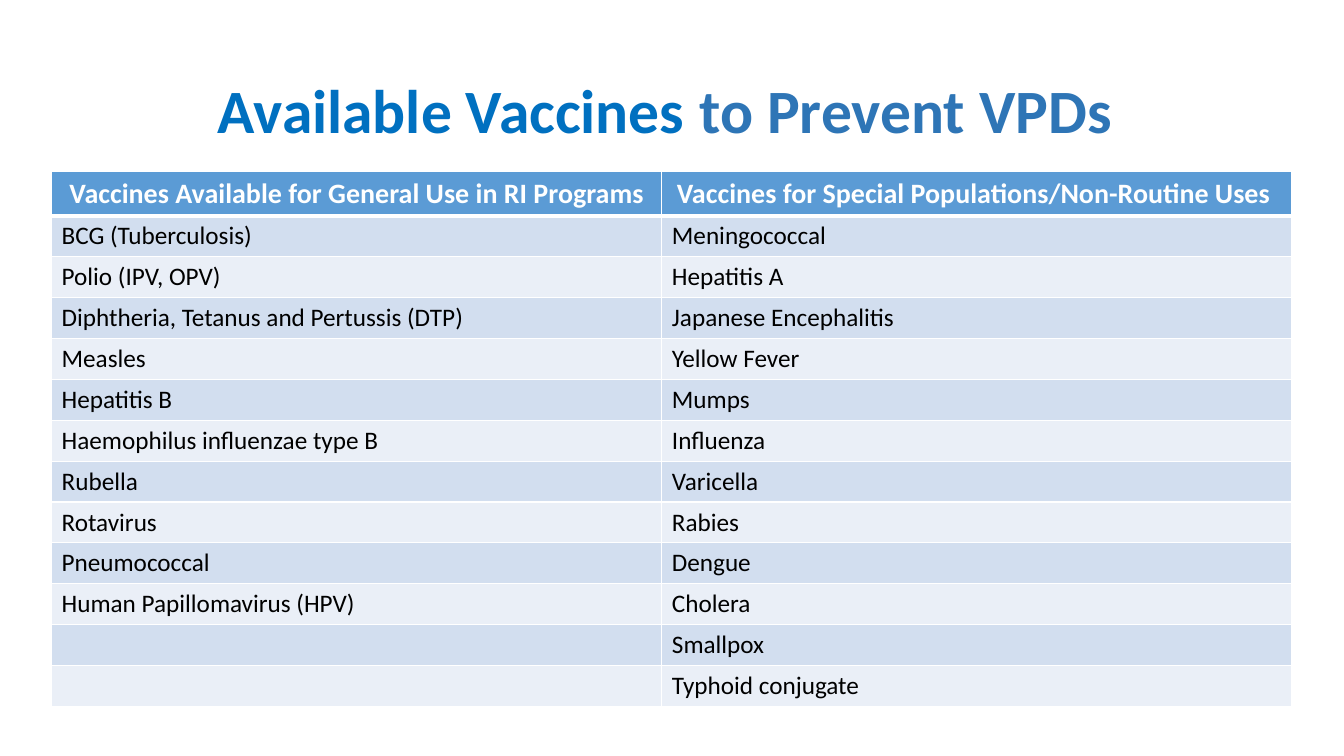
from itertools import zip_longest

from lxml import etree
from pptx import Presentation
from pptx.dml.color import RGBColor
from pptx.enum.text import MSO_ANCHOR, PP_ALIGN
from pptx.oxml.ns import qn
from pptx.util import Cm, Pt

CENTER = PP_ALIGN.CENTER
LEFT = PP_ALIGN.LEFT
MIDDLE = MSO_ANCHOR.MIDDLE
TITLE_ONLY = 5

GENERAL_USE = [
    "BCG (Tuberculosis)", "Polio (IPV, OPV)",
    "Diphtheria, Tetanus and Pertussis (DTP)", "Measles", "Hepatitis B",
    "Haemophilus influenzae type B", "Rubella", "Rotavirus", "Pneumococcal",
    "Human Papillomavirus (HPV)",
]
SPECIAL_USE = [
    "Meningococcal", "Hepatitis A", "Japanese Encephalitis", "Yellow Fever",
    "Mumps", "Influenza", "Varicella", "Rabies", "Dengue", "Cholera",
    "Smallpox", "Typhoid conjugate",
]
HEADINGS = (
    "Vaccines Available for General Use in RI Programs",
    "Vaccines for Special Populations/Non-Routine Uses ",
)


def color(hex_code):
    return RGBColor.from_string(hex_code)


class SlideBuilder:
    font_name = "Calibri"
    header_fill = "5B9BD5"
    band_fills = ("D2DEEF", "EAEFF7")
    border = "FFFFFF"

    def __init__(self, slide):
        self.slide = slide

    def format_font(self, font, size, hex_code, bold):
        font.name = self.font_name
        font.size = Pt(size)
        font.bold = bold
        font.color.rgb = color(hex_code)

    def title(self, parts, left, top, width, height):
        title = self.slide.shapes.title
        title.left, title.top = Cm(left), Cm(top)
        title.width, title.height = Cm(width), Cm(height)
        title.text_frame.vertical_anchor = MIDDLE
        paragraph = title.text_frame.paragraphs[0]
        paragraph.alignment = CENTER
        paragraph.line_spacing = 0.9
        for text, hex_code in parts:
            run = paragraph.add_run()
            run.text = text
            self.format_font(run.font, 44, hex_code, True)

    def cell_borders(self, cell, top, bottom):
        properties = cell._tc.get_or_add_tcPr()
        for side, width in (("L", 1), ("R", 1), ("T", top), ("B", bottom)):
            line = etree.SubElement(properties, qn(f"a:ln{side}"), w=str(Pt(width)))
            fill = etree.SubElement(line, qn("a:solidFill"))
            etree.SubElement(fill, qn("a:srgbClr"), val=self.border)

    def cell(self, cell, text, row_index):
        header = row_index == 0
        self.cell_borders(cell, 3 if row_index == 1 else 1, 3 if header else 1)
        cell.fill.solid()
        band = self.band_fills[(row_index - 1) % 2]
        cell.fill.fore_color.rgb = color(self.header_fill if header else band)
        cell.text_frame.text = text
        paragraph = cell.text_frame.paragraphs[0]
        paragraph.alignment = CENTER if header else LEFT
        for run in paragraph.runs:
            if header:
                self.format_font(run.font, 20, "FFFFFF", True)
            else:
                self.format_font(run.font, 18, "000000", False)

    def table(self, rows, left, top, column_widths, header_height, row_height):
        height = header_height + row_height * (len(rows) - 1)
        table = self.slide.shapes.add_table(
            len(rows), len(column_widths), Cm(left), Cm(top),
            Cm(sum(column_widths)), Cm(height)).table
        for column, width in zip(table.columns, column_widths):
            column.width = Cm(width)
        for row_index, texts in enumerate(rows):
            row = table.rows[row_index]
            row.height = Cm(row_height if row_index else header_height)
            for cell, text in zip(row.cells, texts):
                self.cell(cell, text, row_index)


def main():
    presentation = Presentation()
    presentation.slide_width = Cm(33.87)
    presentation.slide_height = Cm(19.05)
    layout = presentation.slide_layouts[TITLE_ONLY]
    builder = SlideBuilder(presentation.slides.add_slide(layout))

    # Title
    builder.title([("Available Vaccines ", "0070C0"), ("to Prevent VPDs ", "2E75B6")],
                  2.33, 1.01, 29.21, 3.68)

    # Vaccine table
    rows = [HEADINGS, *zip_longest(GENERAL_USE, SPECIAL_USE, fillvalue="")]
    builder.table(rows, 1.3, 4.32, (15.38, 15.87), 1.1, 1.03)

    presentation.save("out.pptx")


if __name__ == "__main__":
    main()
